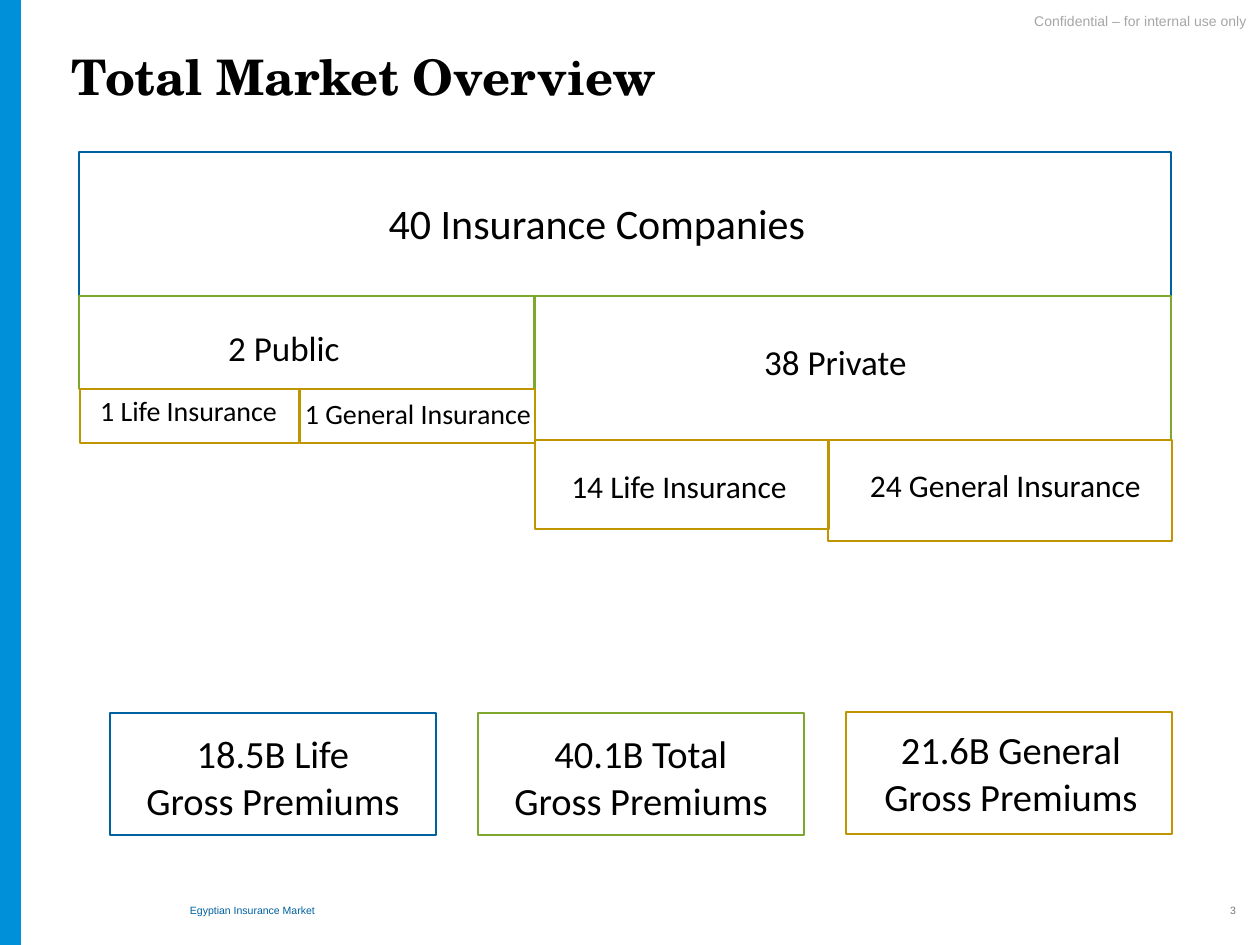
from pptx import Presentation
from pptx.dml.color import RGBColor as RGB
from pptx.enum.shapes import MSO_SHAPE as Shape
from pptx.enum.text import MSO_ANCHOR as Anchor, MSO_AUTO_SIZE as Fit, PP_ALIGN as Align
from pptx.util import Emu, Pt

PX = 914400 / 126
HEX = {"bar": "0090DA", "blue": "0061A0", "green": "7EA72E", "gold": "BF9500",
       "black": "000000", "pale": "A6A6A6", "gray": "75787B"}


def scale(*nums):
    return [Emu(round(n * PX)) for n in nums]


def write(shape, text, size, color="black", face="Calibri", bold=False,
          align=Align.CENTER, anchor=Anchor.TOP, inset=(13, 0), space=None):
    """Fill a shape with text, one paragraph a line."""
    frame = shape.text_frame
    frame.text = text
    side, edge = scale(*inset)
    form = {"word_wrap": True, "auto_size": Fit.NONE, "vertical_anchor": anchor,
            "margin_left": side, "margin_right": side,
            "margin_top": edge, "margin_bottom": edge}
    for name, value in form.items():
        setattr(frame, name, value)
    for para in frame.paragraphs:
        para.alignment = align
        para.line_spacing = space
        for name, value in {"size": Pt(size), "name": face, "bold": bold}.items():
            setattr(para.font, name, value)
        para.font.color.rgb = RGB.from_string(HEX[color])


deck = Presentation()
deck.slide_width, deck.slide_height = scale(1260, 945)
slide = deck.slides.add_slide(deck.slide_layouts[5])
shapes = slide.shapes

bar = shapes.add_shape(Shape.RECTANGLE, *scale(0, 0, 21, 945))
bar.shadow.inherit = False
bar.fill.solid()
bar.fill.fore_color.rgb = RGB.from_string(HEX["bar"])
bar.line.fill.background()

title = shapes.title
title.left, title.top, title.width, title.height = scale(63, 48, 1124, 91)
write(title, "Total Market Overview", 28, face="TeX Gyre Schola", bold=True,
      align=Align.LEFT, inset=(9, 5), space=0.9)

# Text, place, size, colour, alignment, anchor, insets, line spacing
notes = [
    ("Confidential – for internal use only", (874, 14, 386, 29), 8, "pale",
     Align.RIGHT, Anchor.TOP, (13, 0), 0.9),
    ("Egyptian Insurance Market", (181, 900, 426, 20), 6, "blue",
     Align.LEFT, Anchor.MIDDLE, (9, 5), None),
    ("3", (1152, 885, 93, 50), 6, "gray",
     Align.RIGHT, Anchor.MIDDLE, (9, 5), None),
]
for text, place, size, color, align, anchor, inset, space in notes:
    write(shapes.add_textbox(*scale(*place)), text, size, color, "Arial",
          align=align, anchor=anchor, inset=inset, space=space)

# Frame, frame colour, line width, text, text place, size, anchor
boxes = [
    ((79, 152, 1092, 144), "blue", 1.5,
     "40 Insurance Companies", (338, 198, 518, 69), 24, Anchor.TOP),
    ((79, 296, 455, 93), "green", 1.5,
     "2 Public", (110, 326, 348, 58), 20, Anchor.TOP),
    ((535, 296, 636, 144), "green", 1.5,
     "38 Private", (629, 340, 413, 58), 20, Anchor.TOP),
    ((535, 440, 294, 89), "gold", 1.5,
     "14 Life Insurance", (544, 467, 270, 37), 18, Anchor.TOP),
    ((828, 440, 344, 101), "gold", 1.5,
     "24 General Insurance", (828, 466, 355, 37), 18, Anchor.TOP),
    ((80, 389, 219, 54), "gold", 1.5,
     "1 Life Insurance", (79, 394, 219, 39), 16, Anchor.TOP),
    ((300, 389, 235, 54), "gold", 1.5,
     "1 General Insurance", (272, 397, 292, 39), 16, Anchor.TOP),
]
cards = [
    ("blue", "18.5B Life\nGross Premiums", 713, (121, 735, 304, 83)),
    ("green", "40.1B Total\nGross Premiums", 713, (489, 735, 304, 83)),
    ("gold", "21.6B General Gross Premiums", 712, (846, 731, 330, 83)),
]
for i, (color, text, top, place) in enumerate(cards):
    boxes.append(((110 + 368 * i, top, 326, 122), color, 1.25,
                  text, place, 22, Anchor.MIDDLE))

for edge, color, width, text, place, size, anchor in boxes:
    frame = shapes.add_shape(Shape.RECTANGLE, *scale(*edge))
    frame.shadow.inherit = False
    frame.fill.background()
    frame.line.color.rgb = RGB.from_string(HEX[color])
    frame.line.width = Pt(width)
    write(shapes.add_textbox(*scale(*place)), text, size, anchor=anchor)

deck.save("out.pptx")
